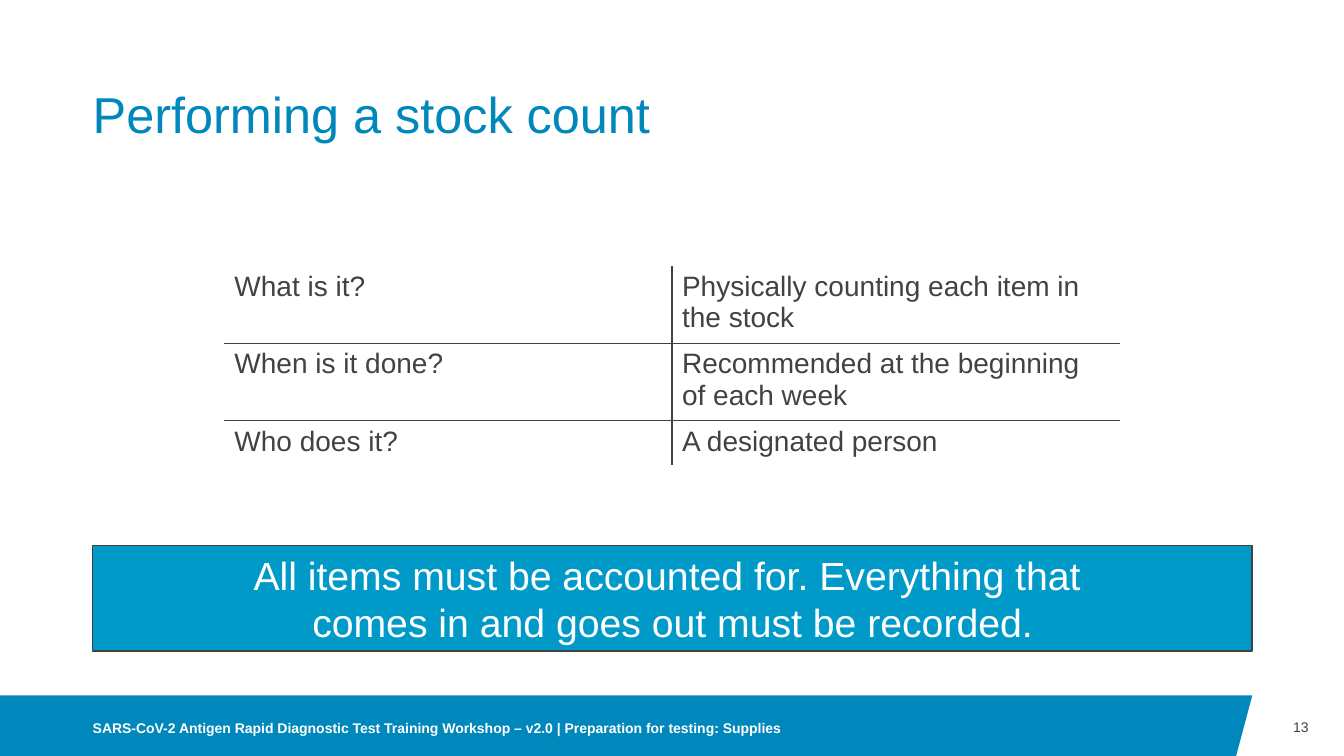
"""Build the slide on performing a stock count."""
from lxml.etree import SubElement as Sub
from pptx import Presentation
from pptx.dml.color import RGBColor
from pptx.enum.shapes import MSO_SHAPE as Shape
from pptx.enum.text import MSO_ANCHOR as Anchor, PP_ALIGN as Align
from pptx.oxml.ns import qn
from pptx.util import Inches, Pt

BLUE = RGBColor(0x00, 0x87, 0xBC)
CYAN = RGBColor(0x00, 0x9A, 0xC9)
GREY = RGBColor(0x42, 0x42, 0x42)
WHITE = RGBColor(0xFF, 0xFF, 0xFF)

TITLE = "Performing a stock count"
FACTS = [
    ("What is it?", "Physically counting each item in the stock"),
    ("When is it done?", "Recommended at the beginning of each week"),
    ("Who does it?", "A designated person"),
]
RULE = [
    "All items must be accounted for. Everything that ",
    "comes in and goes out must be recorded.",
]
FOOTER = ("SARS-CoV-2 Antigen Rapid Diagnostic Test Training Workshop – v2.0 "
          "| Preparation for testing: Supplies")
NUMBER = "13"

WIDE, HIGH = 13.33, 7.5
LEFT, SPAN = 0.92, 11.5
RIGHT = LEFT + SPAN
BAND = 6.9
SLANT = 0.16
COLUMN = 4.44
ROWS = [0.72, 0.72, 0.41]


def write(frame, lines, size, color, align=Align.LEFT, bold=False, lead=None):
    for i, line in enumerate(lines):
        para = frame.paragraphs[0] if i == 0 else frame.add_paragraph()
        para.alignment = align
        if lead:
            para.line_spacing = lead
        run = para.add_run()
        run.text = line
        run.font.name = "Arial"
        run.font.size = Pt(size)
        run.font.bold = bold
        run.font.color.rgb = color


def inset(frame, gap, anchor):
    frame.word_wrap = True
    frame.vertical_anchor = anchor
    frame.margin_left = frame.margin_right = Inches(gap)
    frame.margin_top = frame.margin_bottom = Inches(gap)


def label(slide, place, text, size, color, anchor=Anchor.MIDDLE, **look):
    frame = slide.shapes.add_textbox(*map(Inches, place)).text_frame
    inset(frame, 0, anchor)
    write(frame, [text], size, color, **look)


def border(cell, side, shown):
    line = Sub(cell._tc.get_or_add_tcPr(), qn("a:ln" + side), w=str(Pt(1)))
    if shown:
        fill = Sub(line, qn("a:solidFill"))
        Sub(fill, qn("a:srgbClr"), val=str(GREY))
    else:
        Sub(line, qn("a:noFill"))


def band(slide):
    pen = slide.shapes.build_freeform(0, Inches(BAND), scale=1.0)
    points = [(RIGHT, BAND), (RIGHT - SLANT, HIGH), (0, HIGH)]
    pen.add_line_segments([(Inches(x), Inches(y)) for x, y in points])
    shape = pen.convert_to_shape()
    shape.shadow.inherit = False
    shape.fill.solid()
    shape.fill.fore_color.rgb = BLUE
    shape.line.fill.background()


def grid(slide):
    last, wide = len(FACTS) - 1, 2 * COLUMN
    place = ((WIDE - wide) / 2, 2.64, wide, sum(ROWS))
    table = slide.shapes.add_table(len(FACTS), 2, *map(Inches, place)).table
    table.first_row = table.horz_banding = False
    for r, fact in enumerate(FACTS):
        table.rows[r].height = Inches(ROWS[r])
        for c, text in enumerate(fact):
            cell = table.cell(r, c)
            write(cell.text_frame, [text], 20, GREY)
            edges = {"L": c == 1, "R": c == 0, "T": r > 0, "B": r < last}
            for side, shown in edges.items():
                border(cell, side, shown)
            cell.fill.background()


def banner(slide):
    place = (LEFT, 5.41, SPAN, 1.05)
    box = slide.shapes.add_shape(Shape.RECTANGLE, *map(Inches, place))
    box.shadow.inherit = False
    box.fill.solid()
    box.fill.fore_color.rgb = CYAN
    box.line.color.rgb = GREY
    box.line.width = Pt(1)
    inset(box.text_frame, 0.06, Anchor.MIDDLE)
    write(box.text_frame, RULE, 28, WHITE, Align.CENTER)


def main():
    deck = Presentation()
    deck.slide_width, deck.slide_height = Inches(WIDE), Inches(HIGH)
    slide = deck.slides.add_slide(deck.slide_layouts[6])
    band(slide)
    label(slide, (LEFT, 0.4, SPAN, 1.03), TITLE, 36, BLUE, Anchor.BOTTOM,
          lead=0.9)
    label(slide, (RIGHT, BAND, 0.56, 0.63), NUMBER, 10, GREY,
          align=Align.RIGHT)
    grid(slide)
    banner(slide)
    label(slide, (LEFT, 6.95, 8, 0.55), FOOTER, 10, WHITE, bold=True)
    deck.save("out.pptx")


if __name__ == "__main__":
    main()
